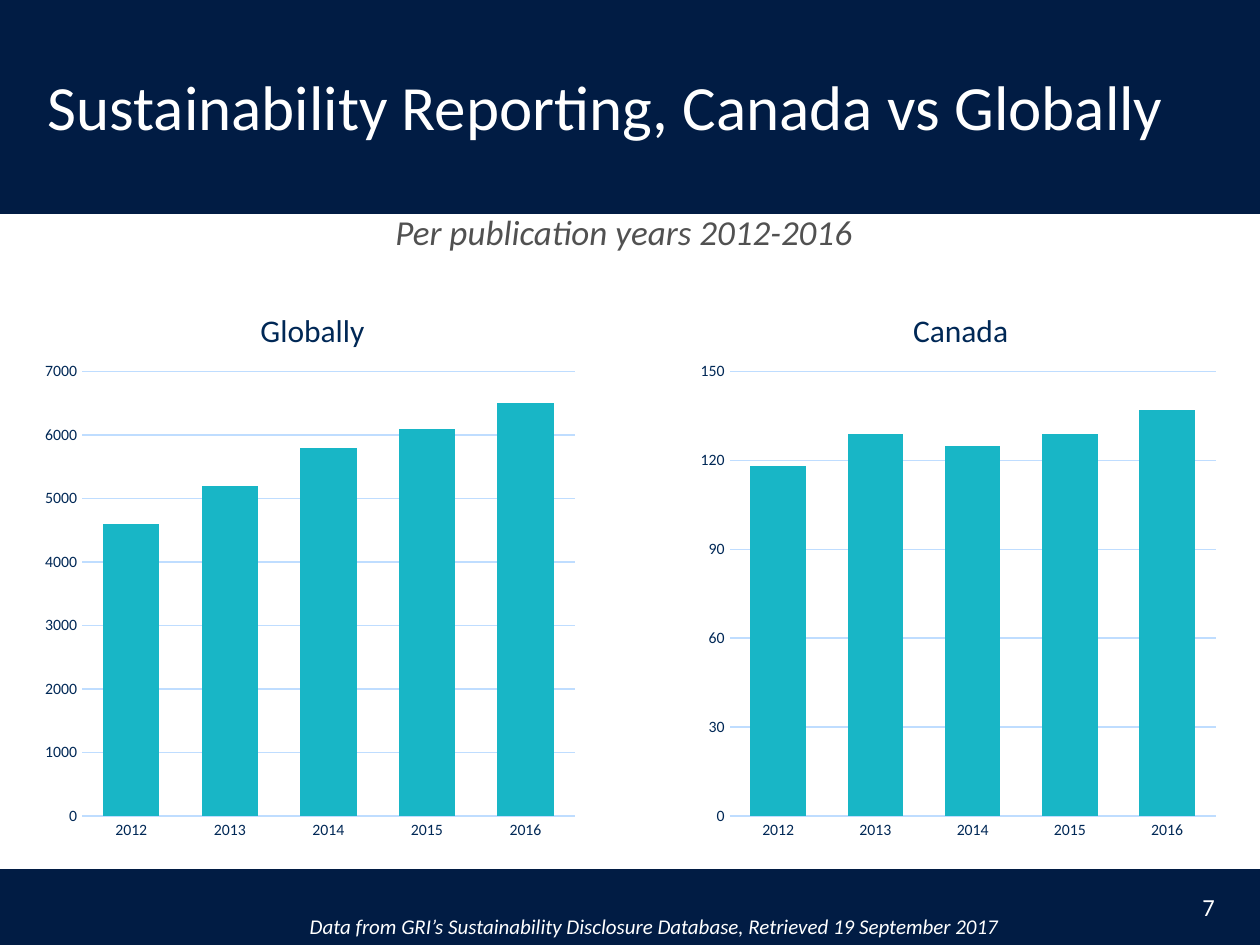
from dataclasses import dataclass
from typing import Optional

from lxml.etree import SubElement
from pptx import Presentation
from pptx.chart.data import CategoryChartData
from pptx.dml.color import RGBColor
from pptx.enum.chart import XL_CHART_TYPE as ChartType, XL_TICK_MARK as TickMark
from pptx.enum.shapes import MSO_SHAPE as ShapeType
from pptx.enum.text import MSO_ANCHOR as Anchor, PP_ALIGN as Align
from pptx.oxml.ns import qn
from pptx.util import Inches, Pt

FONT = "Calibri"
COLORS = {
    "navy": "011C44",
    "white": "FFFFFF",
    "gray": "515151",
    "label": "002856",
    "grid": "BFDDFF",
    "bar": "18B6C6",
}
YEARS = ["2012", "2013", "2014", "2015", "2016"]


@dataclass
class Box:
    left: float
    top: float
    width: float
    height: float

    def lengths(self) -> tuple:
        return tuple(Inches(n) for n in (self.left, self.top, self.width, self.height))


@dataclass
class Label:
    text: str
    box: Box
    size: int
    color: str = "white"
    italic: bool = False
    align: Align = Align.LEFT
    anchor: Anchor = Anchor.TOP
    spacing: float = 0.9


@dataclass
class BarChart:
    title: str
    box: Box
    plot: Box
    title_left: float
    values: list
    maximum: int
    step: int


LABELS = [
    Label("Sustainability Reporting, Canada vs Globally", Box(0.28, 0.29, 9.46, 1.17), 36,
          anchor=Anchor.MIDDLE),
    Label("Per publication years 2012-2016", Box(3.04, 1.66, 5.22, 0.57), 20, "gray", True),
    Label("Data from GRI’s Sustainability Disclosure Database, Retrieved 19 September 2017",
          Box(2.36, 7.22, 6.74, 0.28), 12, italic=True),
    Label("7", Box(9.22, 7.03, 0.52, 0.34), 14, align=Align.RIGHT, spacing=1.0),
]
CHARTS = [
    BarChart("Globally", Box(0.27, 2.19, 4.38, 4.57), Box(0.65, 2.95, 3.91, 3.53), 2.02,
             [4600, 5200, 5800, 6100, 6500], 7000, 1000),
    BarChart("Canada", Box(5.48, 2.19, 4.26, 4.57), Box(5.79, 2.95, 3.86, 3.53), 7.2,
             [118, 129, 125, 129, 137], 150, 30),
]
TITLE_TOP = 2.4


def rgb(name: str) -> RGBColor:
    return RGBColor.from_string(COLORS[name])


def style_font(font, size: int, color: str, italic: Optional[bool] = None) -> None:
    font.name = FONT
    font.size = Pt(size)
    font.bold = False
    font.italic = italic
    font.color.rgb = rgb(color)


def add_label(slide, label: Label) -> None:
    text_frame = slide.shapes.add_textbox(*label.box.lengths()).text_frame
    text_frame.word_wrap = True
    text_frame.vertical_anchor = label.anchor
    text_frame.text = label.text
    paragraph = text_frame.paragraphs[0]
    paragraph.alignment = label.align
    paragraph.line_spacing = label.spacing
    style_font(paragraph.runs[0].font, label.size, label.color, label.italic)


def set_layout(element, position: int, settings: dict) -> None:
    for old in element.findall(qn("c:layout")):
        element.remove(old)
    layout = SubElement(element, qn("c:layout"))
    element.insert(position, layout)
    manual = SubElement(layout, qn("c:manualLayout"))
    for name, value in settings.items():
        text = value if isinstance(value, str) else f"{value:.3f}"
        SubElement(manual, qn(f"c:{name}")).set("val", text)


def place_parts(chart, spec: BarChart) -> None:
    box, plot = spec.box, spec.plot
    edges = {"xMode": "edge", "yMode": "edge"}
    set_layout(chart.chart_title.element, 1, edges | {
        "x": (spec.title_left - box.left) / box.width,
        "y": (TITLE_TOP - box.top) / box.height,
    })
    set_layout(chart.element.find(f".//{qn('c:plotArea')}"), 0, {"layoutTarget": "inner"} | edges | {
        "x": (plot.left - box.left) / box.width,
        "y": (plot.top - box.top) / box.height,
        "w": plot.width / box.width,
        "h": plot.height / box.height,
    })


def style_line(line) -> None:
    line.color.rgb = rgb("grid")
    line.width = Pt(0.75)


def add_bar_chart(slide, spec: BarChart) -> None:
    data = CategoryChartData()
    data.categories = YEARS
    data.add_series("Series 1", spec.values)
    chart = slide.shapes.add_chart(ChartType.COLUMN_CLUSTERED, *spec.box.lengths(), data).chart
    style_font(chart.font, 10, "label")
    chart.has_legend = False
    chart.has_title = True
    title_frame = chart.chart_title.text_frame
    title_frame.text = spec.title
    style_font(title_frame.paragraphs[0].runs[0].font, 18, "label")

    for axis in (chart.category_axis, chart.value_axis):
        axis.major_tick_mark = TickMark.NONE
        axis.minor_tick_mark = TickMark.NONE
        style_font(axis.tick_labels.font, 9, "label")
    style_line(chart.category_axis.format.line)
    value_axis = chart.value_axis
    value_axis.format.line.fill.background()
    value_axis.minimum_scale = 0
    value_axis.maximum_scale = spec.maximum
    value_axis.major_unit = spec.step
    style_line(value_axis.major_gridlines.format.line)

    plot = chart.plots[0]
    plot.gap_width = 75
    plot.overlap = -25
    plot.vary_by_categories = False
    fill = plot.series[0].format.fill
    fill.solid()
    fill.fore_color.rgb = rgb("bar")
    place_parts(chart, spec)


def add_panel(slide, box: Box) -> None:
    panel = slide.shapes.add_shape(ShapeType.FLOWCHART_PROCESS, *box.lengths())
    panel.shadow.inherit = False
    panel.fill.solid()
    panel.fill.fore_color.rgb = rgb("white")
    panel.line.fill.background()


def main() -> None:
    """Build the sustainability reporting slide."""
    presentation = Presentation()
    presentation.slide_width = Inches(10)
    presentation.slide_height = Inches(7.5)
    slide = presentation.slides.add_slide(presentation.slide_layouts[6])
    slide.background.fill.solid()
    slide.background.fill.fore_color.rgb = rgb("navy")
    add_panel(slide, Box(0, 1.7, 10, 5.2))
    for label in LABELS:
        add_label(slide, label)
    for chart in CHARTS:
        add_bar_chart(slide, chart)
    presentation.save("out.pptx")


if __name__ == "__main__":
    main()
